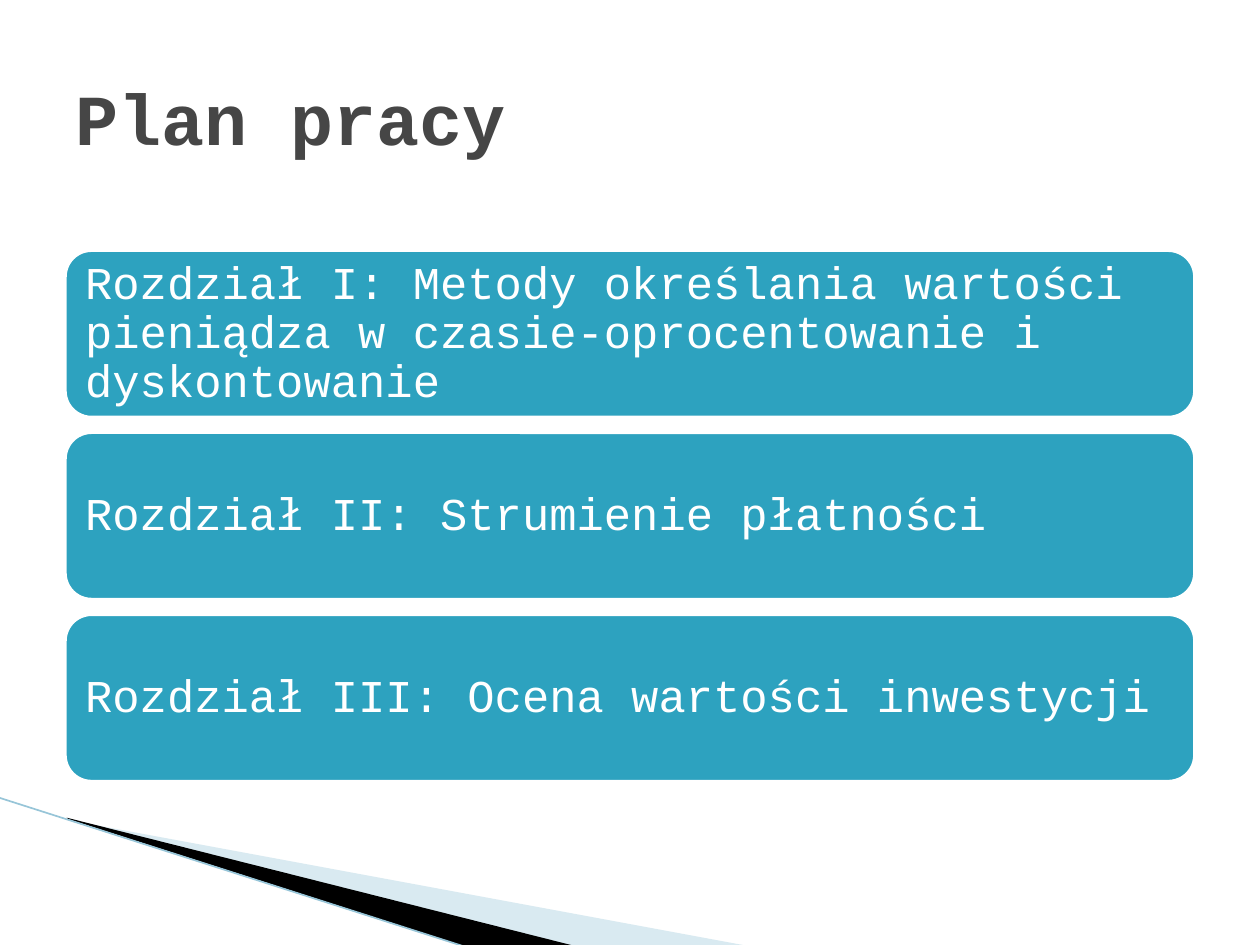
from lxml.etree import SubElement
from pptx import Presentation
from pptx.dml.color import RGBColor
from pptx.enum.shapes import MSO_CONNECTOR, MSO_SHAPE
from pptx.enum.text import MSO_ANCHOR, PP_ALIGN
from pptx.oxml.ns import qn
from pptx.util import Inches, Pt


def color(hex_string):
    return RGBColor.from_string(hex_string)


def format_text(shape, text, font_values, inset):
    """Write one left-aligned, vertically centred paragraph and return it."""
    frame = shape.text_frame
    frame_values = {"word_wrap": True, "vertical_anchor": MSO_ANCHOR.MIDDLE,
                    "margin_left": inset, "margin_right": inset,
                    "margin_top": inset, "margin_bottom": inset}
    for name, value in frame_values.items():
        setattr(frame, name, value)
    paragraph = frame.paragraphs[0]
    paragraph.text = text
    paragraph.alignment = PP_ALIGN.LEFT
    for name, value in font_values.items():
        if name == "color":
            paragraph.font.color.rgb = color(value)
        else:
            setattr(paragraph.font, name, value)
    return paragraph


presentation = Presentation()
presentation.slide_width = Inches(10)
presentation.slide_height = Inches(7.5)
slide = presentation.slides.add_slide(presentation.slide_layouts[5])

# Corner decoration: pale wedge, black wedge and edge line
wedges = [
    ("A0CBDC", 40, [(0.55, 6.51), (5.95, 7.51), (4.56, 7.51), (0.55, 6.5)]),
    ("000000", 100, [(0.53, 6.49), (4.57, 7.51), (3.72, 7.52), (0.54, 6.5)]),
]
for fill, opacity, points in wedges:
    corners = [(Inches(x), Inches(y)) for x, y in points]
    builder = slide.shapes.build_freeform(*corners[0])
    builder.add_line_segments(corners[1:], close=True)
    wedge = builder.convert_to_shape()
    wedge.shadow.inherit = False
    wedge.fill.solid()
    wedge.fill.fore_color.rgb = color(fill)
    wedge.line.fill.background()
    if opacity < 100:
        fill_color = wedge.fill._xPr.find(qn("a:solidFill"))[0]
        SubElement(fill_color, qn("a:alpha"), val=str(opacity * 1000))

edge = slide.shapes.add_connector(
    MSO_CONNECTOR.STRAIGHT, Inches(-0.01), Inches(6.33), Inches(3.71), Inches(7.52))
edge.line.color.rgb = color("97C5D8")
edge.line.width = Pt(0.95)
SubElement(edge._element.spPr, qn("a:effectLst"))

# Chapter boxes, evenly spaced
chapters = [
    "Rozdział I: Metody określania wartości pieniądza w czasie-oprocentowanie i dyskontowanie",
    "Rozdział II: Strumienie płatności",
    "Rozdział III: Ocena wartości inwestycji",
]
first_top, last_top = 1.97, 4.86
pitch = (last_top - first_top) / (len(chapters) - 1)
chapter_font = {"name": "Courier New", "size": Pt(26), "color": "FFFFFF"}
for index, chapter in enumerate(chapters):
    box = slide.shapes.add_shape(
        MSO_SHAPE.ROUNDED_RECTANGLE,
        Inches(0.5), Inches(first_top + index * pitch), Inches(9), Inches(1.36))
    box.shadow.inherit = False
    box.fill.solid()
    box.fill.fore_color.rgb = color("2DA2BF")
    box.line.color.rgb = color("FFFFFF")
    box.line.width = Pt(4.33)
    paragraph = format_text(box, chapter, chapter_font, Inches(0.11))
    paragraph.line_spacing = 0.9

title = slide.shapes.title
title.left, title.top = Inches(0.5), Inches(0.3)
title.width, title.height = Inches(9), Inches(1.25)
title_font = {"name": "Courier New", "size": Pt(41), "bold": True, "color": "464646"}
format_text(title, "Plan pracy", title_font, Inches(0.1))

presentation.save("out.pptx")
